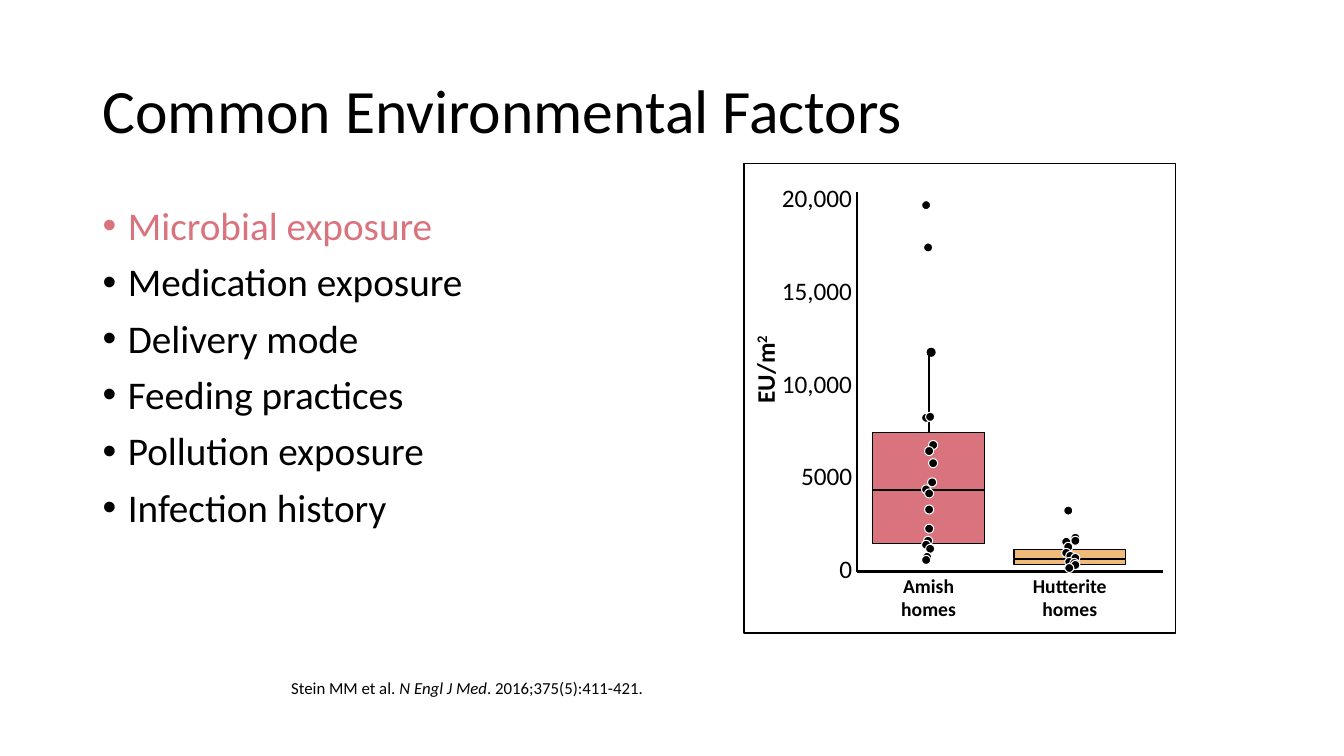
import pptx
import pptx.dml.color
import pptx.enum.shapes
import pptx.enum.text
import pptx.oxml
import pptx.oxml.ns
import pptx.util

Inches = pptx.util.Inches
Pt = pptx.util.Pt
Shapes = pptx.enum.shapes.MSO_SHAPE
Align = pptx.enum.text.PP_ALIGN
Anchor = pptx.enum.text.MSO_ANCHOR

BLACK, WHITE, ROSE, AMBER = "000000", "FFFFFF", "D9747E", "F0BB79"
FACTORS = ["Microbial exposure", "Medication exposure", "Delivery mode",
           "Feeding practices", "Pollution exposure", "Infection history"]
AXIS_LABELS = ["20,000", "15,000", "10,000", "5000", "0"]
DOT_SIZE = 0.09
BOX_WIDTH = 1.11

AMISH = {
    "label": "Amish homes", "center": 1.83, "color": ROSE,
    "halves": [(2.97, 0.8), (2.67, 0.57)], "whisker": (1.85, 3.95),
    "dots": [(-0.07, 0.37), (-0.05, 0.79), (-0.02, 1.83), (-0.07, 2.48), (-0.03, 2.47),
             (0, 2.75), (-0.04, 2.81), (0, 2.93), (-0.01, 3.12), (-0.07, 3.19),
             (-0.04, 3.23), (-0.04, 3.39), (-0.04, 3.58), (-0.05, 3.7), (-0.07, 3.74),
             (-0.03, 3.78), (-0.06, 3.86), (-0.07, 3.89)],
}
HUTTERITE = {
    "label": "Hutterite homes", "center": 3.23, "color": AMBER,
    "halves": [(3.93, 0.05), (3.83, 0.09)], "whisker": None,
    "dots": [(-0.06, 3.4), (0.01, 3.67), (0.01, 3.7), (-0.08, 3.71), (-0.06, 3.76),
             (-0.08, 3.82), (-0.04, 3.85), (0.01, 3.87), (-0.05, 3.91), (0, 3.92),
             (0.01, 3.94), (-0.05, 3.97)],
}


def rgb(value):
    return pptx.dml.color.RGBColor.from_string(value)


def format_runs(paragraph, size, color=BLACK, bold=False):
    for run in paragraph.runs:
        run.font.name = "Calibri"
        run.font.size = Pt(size)
        run.font.bold = bold
        run.font.color.rgb = rgb(color)


def add_text(slide, left, top, width, height, text, size, bold=False,
             align=Align.LEFT, anchor=Anchor.TOP, wrap=True):
    box = slide.shapes.add_textbox(Inches(left), Inches(top), Inches(width), Inches(height))
    frame = box.text_frame
    frame.word_wrap = wrap
    frame.vertical_anchor = anchor
    frame.text = text
    paragraph = frame.paragraphs[0]
    paragraph.alignment = align
    format_runs(paragraph, size, bold=bold)
    return box


def add_filled(slide, kind, left, top, width, height, fill, line=BLACK, weight=1):
    shape = slide.shapes.add_shape(kind, Inches(left), Inches(top), Inches(width), Inches(height))
    shape.shadow.inherit = False
    shape.fill.solid()
    shape.fill.fore_color.rgb = rgb(fill)
    if line:
        shape.line.color.rgb = rgb(line)
        shape.line.width = Pt(weight)
    else:
        shape.line.fill.background()


def add_line(slide, x1, y1, x2, y2):
    line = slide.shapes.add_connector(pptx.enum.shapes.MSO_CONNECTOR.STRAIGHT,
                                      Inches(x1), Inches(y1), Inches(x2), Inches(y2))
    line.line.color.rgb = rgb(BLACK)
    line.line.width = Pt(1.5)
    line._element.spPr.append(pptx.oxml.parse_xml(
        f'<a:effectLst {pptx.oxml.ns.nsdecls("a")}/>'))


def add_title(slide, left, top, width, height):
    box = add_text(slide, left, top, width, height, "Common Environmental Factors", 44,
                   anchor=Anchor.MIDDLE)
    box.text_frame.paragraphs[0].line_spacing = 0.9


def add_factors(slide, left, top, width, height):
    frame = add_text(slide, left, top, width, height, "\n".join(FACTORS), 28).text_frame
    for index, paragraph in enumerate(frame.paragraphs):
        paragraph.line_spacing = 0.9
        if index:
            paragraph.space_before = Pt(10)
        properties = paragraph._p.get_or_add_pPr()
        properties.set("marL", str(Inches(0.25)))
        properties.set("indent", str(-Inches(0.25)))
        namespace = pptx.oxml.ns.nsdecls("a")
        properties.append(pptx.oxml.parse_xml(f'<a:buFont {namespace} typeface="Arial"/>'))
        properties.append(pptx.oxml.parse_xml(f'<a:buChar {namespace} char="•"/>'))
        format_runs(paragraph, 28, BLACK if index else ROSE)


def add_citation(slide, left, top, width, height):
    box = add_text(slide, left, top, width, height, "Stein MM et al.\u00a0".replace("\u00a0", " "), 12)
    paragraph = box.text_frame.paragraphs[0]
    paragraph.line_spacing = 0.9
    journal = paragraph.add_run()
    journal.text = "N Engl J Med"
    journal.font.italic = True
    paragraph.add_run().text = ". 2016;375(5):411-421."
    format_runs(paragraph, 12)


def add_box(slide, left, top, group):
    center = left + group["center"]
    if group["whisker"]:
        start, end = group["whisker"]
        add_line(slide, center, top + start, center, top + end)
    for offset, height in group["halves"]:
        add_filled(slide, Shapes.RECTANGLE, center - BOX_WIDTH / 2, top + offset,
                   BOX_WIDTH, height, group["color"])
    add_text(slide, center - 0.61, top + 4.02, 1.22, 0.57, group["label"], 14,
             bold=True, align=Align.CENTER)


def add_dots(slide, left, top, group):
    whisker = group["whisker"]
    for x, y in group["dots"]:
        on_whisker_end = whisker and abs(y - whisker[0]) < 0.05
        add_filled(slide, Shapes.OVAL, left + group["center"] + x, top + y, DOT_SIZE, DOT_SIZE,
                   BLACK, None if on_whisker_end else WHITE, 0.75)


def add_box_plot(slide, left, top, width, height):
    add_filled(slide, Shapes.RECTANGLE, left, top, width, height, WHITE)
    for group in (HUTTERITE, AMISH):
        add_box(slide, left, top, group)
    axis_left, axis_bottom = left + 1.12, top + 4.05
    add_line(slide, axis_left, top + 0.28, axis_left, axis_bottom)
    add_line(slide, axis_left, axis_bottom, left + 4.15, axis_bottom)
    for index, label in enumerate(AXIS_LABELS):
        add_text(slide, left + 0.27, top + 0.14 + 0.92 * index, 0.9, 0.4, label, 18,
                 align=Align.RIGHT, wrap=False)
    unit = add_text(slide, left - 0.24, top + 1.86, 0.89, 0.4, "EU/m", 18, bold=True,
                    align=Align.RIGHT, wrap=False)
    unit.rotation = 270
    paragraph = unit.text_frame.paragraphs[0]
    exponent = paragraph.add_run()
    exponent.text = "2"
    format_runs(paragraph, 18, bold=True)
    exponent.font._element.set("baseline", "30000")
    for group in (AMISH, HUTTERITE):
        add_dots(slide, left, top, group)


def main():
    presentation = pptx.Presentation()
    presentation.slide_width = Inches(13.33)
    presentation.slide_height = Inches(7.5)
    slide = presentation.slides.add_slide(presentation.slide_layouts[6])
    add_title(slide, 0.92, 0.4, 11.5, 1.45)
    add_factors(slide, 0.92, 2, 5.24, 4.51)
    add_citation(slide, 2.79, 6.7, 9.63, 0.72)
    add_box_plot(slide, 7.38, 1.62, 4.28, 4.66)
    presentation.save("out.pptx")


if __name__ == "__main__":
    main()
